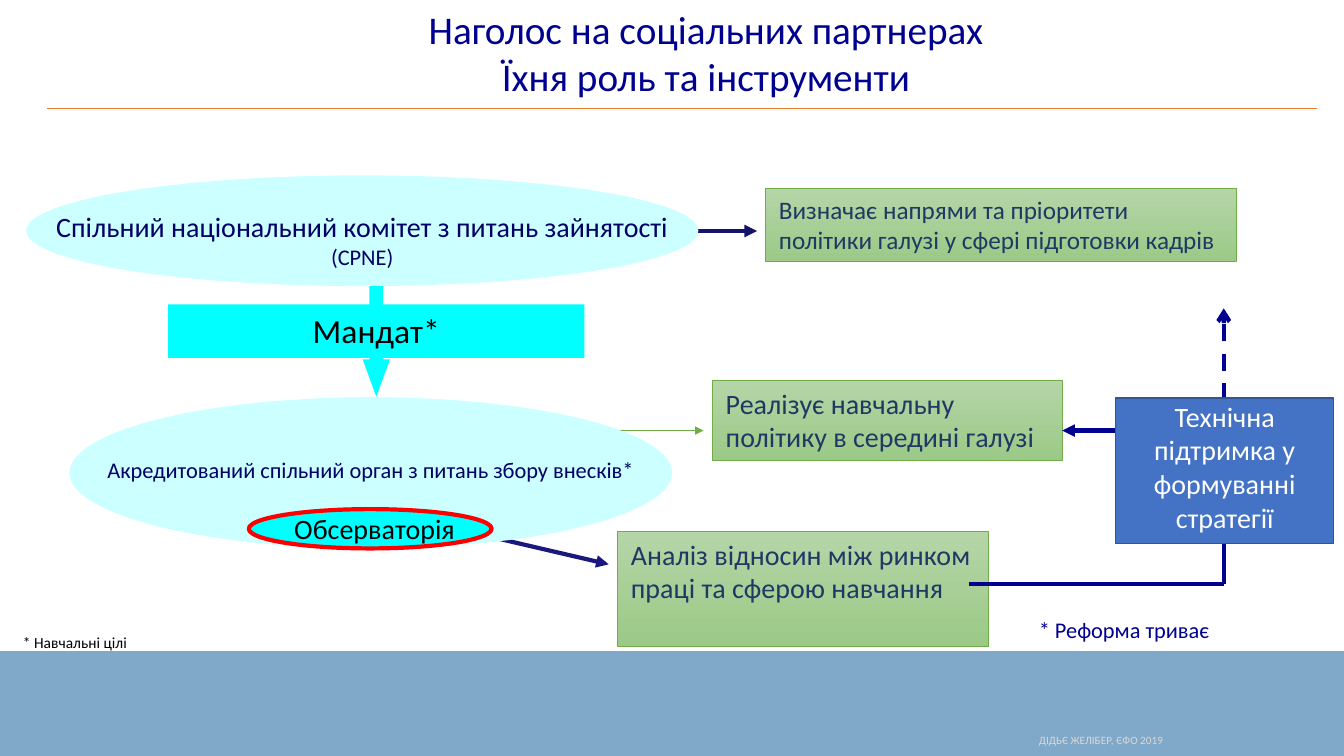
import pptx
import pptx.util
import pptx.dml.color
import pptx.enum.dml
import pptx.enum.shapes
import pptx.enum.text
import pptx.oxml.ns
import lxml.etree

Cm = pptx.util.Cm
Pt = pptx.util.Pt
SHAPE = pptx.enum.shapes.MSO_SHAPE
ALIGN = pptx.enum.text.PP_ALIGN
ANCHOR = pptx.enum.text.MSO_ANCHOR

COLORS = {
    "band": "80A8C8", "green_top": "B5D5A7", "green_bottom": "9CC987",
    "green_line": "70AD47", "green_text": "203864", "pale": "CCFFFF",
    "cyan": "00FFFF", "red": "FF0000", "ellipse_text": "000066",
    "navy": "000090", "analysis_arrow": "1A187F", "policy_arrow": "15136B",
    "blue": "4472C4", "blue_line": "325491", "orange": "ED7D31",
    "white": "FFFFFF", "black": "000000", "grey": "D9D9D9",
}

# Content: positions are left, top, width, height in cm
BAND = (0, 16.41, 33.87, 2.64)
TASKS = [
    ("Аналіз відносин між ринком праці та сферою навчання", (15.57, 13.39, 9.35, 2.9), 20),
    ("Реалізує навчальну політику в середині галузі", (17.96, 9.58, 8.81, 2.03), 20),
    ("Визначає напрями та пріоритети політики галузі у сфері підготовки кадрів",
     (19.3, 4.75, 11.86, 1.85), 18),
]
# start, end, colour, width, arrowhead, dashed
CONNECTORS = [
    ((11.86, 13.41), (15.34, 14.22), "analysis_arrow", 3, "triangle", False),
    ((15.39, 10.85), (17.73, 10.85), "green_line", 0.5, "triangle", False),
    ((17.48, 5.82), (19.08, 5.82), "policy_arrow", 3, "triangle", False),
    ((24.41, 14.71), (30.84, 14.71), "navy", 3, None, False),
    ((30.84, 13.69), (30.84, 14.71), "navy", 3, None, False),
    ((28.12, 10.85), (26.77, 10.85), "navy", 3, "triangle", False),
    ((30.84, 10.82), (30.84, 7.77), "navy", 3, "arrow", True),
]
TITLE_RULE = ((1.19, 2.72), (33.2, 2.72), "orange", 0.5, None, False)
COMMITTEE = "Спільний національний комітет з питань зайнятості\v(CPNE)"
BODY = "Акредитований спільний орган з питань збору внесків*"
SUPPORT = "Технічна підтримка у формуванні стратегії"
TITLE = "Наголос на соціальних партнерах\nЇхня роль та інструменти"
# text, position, size, colour, wrap, anchor
NOTES = [
    ("* Навчальні цілі", (0.33, 15.82, 3.63, 0.74), 11, "black", True, ANCHOR.TOP),
    ("* Реформа триває", (25.93, 15.39, 8, 0.94), 16, "navy", True, ANCHOR.TOP),
    ("ДІДЬЄ ЖЕЛІБЕР, ЄФО 2019", (25.93, 18.34, 3.76, 0.61), 8, "grey", False, ANCHOR.MIDDLE),
]

presentation = pptx.Presentation()
presentation.slide_width = Cm(33.87)
presentation.slide_height = Cm(19.05)
slide = presentation.slides.add_slide(presentation.slide_layouts[6])


def rgb(name):
    return pptx.dml.color.RGBColor.from_string(COLORS[name])


def add_box(kind, position, fill, line=None, line_width=0.5):
    shape = slide.shapes.add_shape(kind, *map(Cm, position))
    shape.shadow.inherit = False
    if fill == "green":
        shape.fill.gradient()
        shape.fill.gradient_angle = 270
        for stop, name in zip(shape.fill.gradient_stops, ("green_top", "green_bottom")):
            stop.color.rgb = rgb(name)
    else:
        shape.fill.solid()
        shape.fill.fore_color.rgb = rgb(fill)
    if line:
        shape.line.color.rgb = rgb(line)
        shape.line.width = Pt(line_width)
    else:
        shape.line.fill.background()
    return shape


def write(shape, text, sizes, color, align=ALIGN.LEFT, anchor=ANCHOR.TOP,
          margins=(0.25, 0.13, 0.25, 0.13), wrap=True):
    """Sizes go to the runs of each paragraph in turn."""
    frame = shape.text_frame
    frame.text = text
    frame.word_wrap = wrap
    frame.vertical_anchor = anchor
    (frame.margin_left, frame.margin_top,
     frame.margin_right, frame.margin_bottom) = map(Cm, margins)
    for paragraph in frame.paragraphs:
        paragraph.alignment = align
        for run, size in zip(paragraph.runs, sizes):
            run.font.size = Pt(size)
            run.font.name = "Calibri"
            run.font.color.rgb = rgb(color)


def add_line(start, end, color, width, head, dashed):
    connector = slide.shapes.add_connector(
        pptx.enum.shapes.MSO_CONNECTOR.STRAIGHT, *map(Cm, start + end))
    connector.line.color.rgb = rgb(color)
    connector.line.width = Pt(width)
    if dashed:
        connector.line.dash_style = pptx.enum.dml.MSO_LINE.DASH
    qn = pptx.oxml.ns.qn
    properties = connector._element.spPr
    if head:
        tail = lxml.etree.SubElement(properties.find(qn("a:ln")), qn("a:tailEnd"))
        tail.set("type", head)
    lxml.etree.SubElement(properties, qn("a:effectLst"))


# Footer band, task boxes and their connectors
add_box(SHAPE.RECTANGLE, BAND, "band")
for text, position, size in TASKS:
    task = add_box(SHAPE.RECTANGLE, position, "green", "green_line")
    write(task, text, [size], "green_text", margins=(0.33, 0.15, 0.33, 0.15))
for connector_data in CONNECTORS:
    add_line(*connector_data)

# Committee and accredited body
committee = add_box(SHAPE.OVAL, (0.66, 4.42, 16.94, 2.79), "pale")
write(committee, COMMITTEE, [20, 16], "ellipse_text", ALIGN.CENTER, ANCHOR.BOTTOM,
      (0.33, 0, 0.33, 0), wrap=False)
body = add_box(SHAPE.OVAL, (1.75, 10.01, 15.19, 3.81), "pale")
write(body, BODY, [16], "ellipse_text", ALIGN.CENTER, ANCHOR.MIDDLE,
      (0.33, 0, 0.33, 0.15), wrap=False)

# Mandate
mandate_arrow = add_box(SHAPE.DOWN_ARROW, (9.14, 7.21, 0.69, 2.79), "cyan")
mandate_arrow.adjustments[1] = 1.37
mandate = add_box(SHAPE.RECTANGLE, (4.24, 7.67, 10.49, 1.35), "cyan")
write(mandate, "Мандат*", [24], "black", ALIGN.CENTER, margins=(0.33, 0.15, 0.33, 0.15))

# Observatory
observatory = add_box(SHAPE.OVAL, (6.27, 12.83, 6.12, 0.99), "cyan", "red", 3)
write(observatory, "Обсерваторія", [20], "black", anchor=ANCHOR.MIDDLE, wrap=False)

# Technical support, tall enough for four lines and reaching the connector below
support = add_box(SHAPE.RECTANGLE, (28.12, 10.03, 5.49, 3.66), "blue", "blue_line", 1)
write(support, SUPPORT, [20], "white", ALIGN.CENTER, margins=(0.1, 0.03, 0.1, 0.03))

# Title with rule
title = add_box(SHAPE.RECTANGLE, (2.26, 0.13, 31.06, 3.18), "white")
write(title, TITLE, [28], "navy", ALIGN.CENTER, margins=(0.25, 0, 0.25, 0.13))
add_line(*TITLE_RULE)

# Notes
for text, position, size, color, wrap, anchor in NOTES:
    note = slide.shapes.add_textbox(*map(Cm, position))
    write(note, text, [size], color, anchor=anchor, wrap=wrap)

presentation.save("out.pptx")
